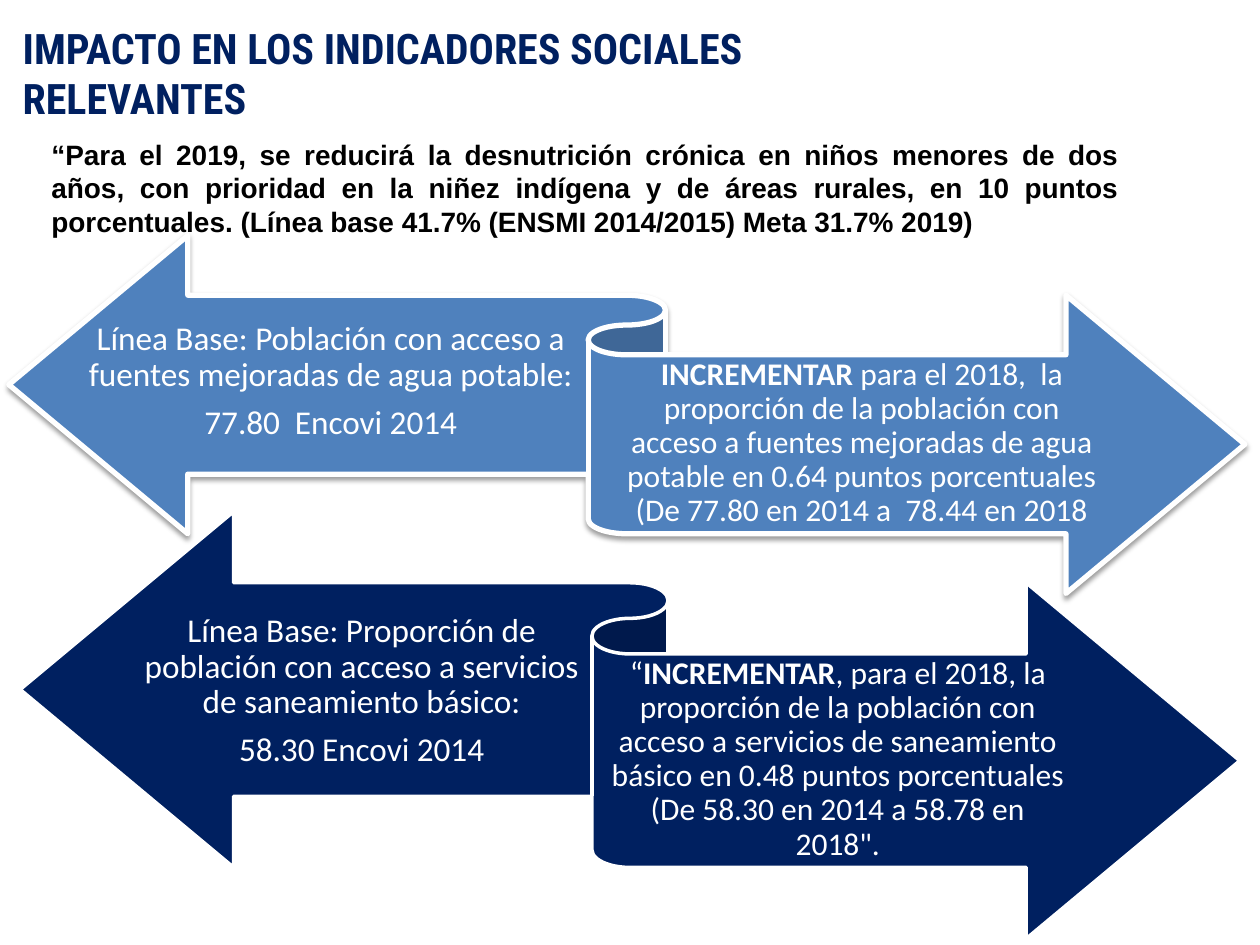
from dataclasses import dataclass

from lxml import etree
from pptx import Presentation
from pptx.dml.color import RGBColor
from pptx.enum.shapes import MSO_SHAPE
from pptx.enum.text import MSO_ANCHOR, MSO_AUTO_SIZE, PP_ALIGN
from pptx.oxml.ns import qn
from pptx.util import Inches, Pt

RIBBON = MSO_SHAPE.LEFT_RIGHT_RIBBON
TOP, MIDDLE = MSO_ANCHOR.TOP, MSO_ANCHOR.MIDDLE
LEFT, CENTER, JUSTIFY = PP_ALIGN.LEFT, PP_ALIGN.CENTER, PP_ALIGN.JUSTIFY

NAVY = RGBColor(0x00, 0x20, 0x60)
BLUE = RGBColor(0x4F, 0x81, 0xBD)
WHITE = RGBColor(0xFF, 0xFF, 0xFF)
BLACK = RGBColor(0x00, 0x00, 0x00)

Box = tuple[float, float, float, float]  # left, top, width, height in inches
Paragraph = list[tuple[str, bool]]  # (text, bold) runs


@dataclass
class Indicator:
    """A two-way ribbon: baseline on the left, target on the right."""
    ribbon: Box
    fill: RGBColor
    line_width: float
    shadow: bool
    baseline_box: Box
    baseline: list[Paragraph]
    target_box: Box
    target: list[Paragraph]


INDICATORS = [
    Indicator(
        (0.07, 1.87, 9.81, 2.84), BLUE, 3, True,
        (0.57, 2.34, 4.11, 1.39),
        [[("Línea Base: Población con acceso a fuentes mejoradas de agua potable:", False)],
         [("77.80  Encovi 2014", False)]],
        (4.92, 2.82, 3.84, 1.39),
        [[("INCREMENTAR", True),
          (" para el 2018,  la proporción de la población con acceso a fuentes "
           "mejoradas de agua potable en 0.64 puntos porcentuales "
           "(De 77.80 en 2014 a  78.44 en 2018", False)]],
    ),
    Indicator(
        (0.16, 4.06, 9.68, 3.39), NAVY, 2, False,
        (1.01, 4.66, 3.72, 1.66),
        [[("Línea Base: Proporción de población con acceso a servicios de "
           "saneamiento básico:", False)],
         [("58.30 Encovi 2014", False)]],
        (4.85, 5.2, 3.6, 1.66),
        [[("“", False), ("INCREMENTAR", True),
          (", para el 2018, la proporción de la población con acceso a servicios "
           "de saneamiento básico en 0.48 puntos porcentuales "
           "(De 58.30 en 2014 a 58.78 en 2018\".", False)]],
    ),
]


def place(shape, box: Box) -> None:
    shape.left, shape.top, shape.width, shape.height = map(Inches, box)


def write(frame, paragraphs: list[Paragraph], *, font: str, size: float,
          color: RGBColor, align=LEFT, anchor=TOP, line_spacing: float = 1.0,
          space_after: float = 0) -> None:
    frame.word_wrap = True
    frame.auto_size = MSO_AUTO_SIZE.NONE
    frame.vertical_anchor = anchor
    for index, runs in enumerate(paragraphs):
        paragraph = frame.add_paragraph() if index else frame.paragraphs[0]
        paragraph.alignment = align
        paragraph.line_spacing = line_spacing
        paragraph.space_before = Pt(0)
        paragraph.space_after = Pt(space_after)
        for text, bold in runs:
            run = paragraph.add_run()
            run.text = text
            run.font.name = font
            run.font.size = Pt(size)
            run.font.bold = bold
            run.font.color.rgb = color


def add_soft_shadow(shape) -> None:
    effects = shape._element.spPr.find(qn("a:effectLst"))
    shadow = etree.SubElement(effects, qn("a:outerShdw"), blurRad=str(Pt(3.1)),
                              dist=str(Pt(1.6)), dir="5400000", rotWithShape="0")
    color = etree.SubElement(shadow, qn("a:srgbClr"), val=str(BLACK))
    etree.SubElement(color, qn("a:alpha"), val="38000")


def add_ribbon_text(slide, box: Box, paragraphs: list[Paragraph], *,
                    size: float, bottom: float) -> None:
    frame = slide.shapes.add_textbox(*map(Inches, box)).text_frame
    frame.margin_left = frame.margin_right = 0
    frame.margin_top, frame.margin_bottom = Inches(0.07), Inches(bottom)
    write(frame, paragraphs, font="Calibri", size=size, color=WHITE, align=CENTER,
          anchor=MIDDLE, line_spacing=0.9, space_after=0.35 * size)


def add_indicator(slide, indicator: Indicator) -> None:
    ribbon = slide.shapes.add_shape(RIBBON, *map(Inches, indicator.ribbon))
    ribbon.shadow.inherit = False
    ribbon.fill.solid()
    ribbon.fill.fore_color.rgb = indicator.fill
    ribbon.line.color.rgb = WHITE
    ribbon.line.width = Pt(indicator.line_width)
    if indicator.shadow:
        add_soft_shadow(ribbon)
    add_ribbon_text(slide, indicator.baseline_box, indicator.baseline, size=19, bottom=0.08)
    add_ribbon_text(slide, indicator.target_box, indicator.target, size=18, bottom=0.07)


def main() -> None:
    presentation = Presentation()
    presentation.slide_width, presentation.slide_height = Inches(10), Inches(7.5)
    slide = presentation.slides.add_slide(presentation.slide_layouts[5])

    # Title
    title = slide.shapes.title
    place(title, (0.08, -0.08, 6.77, 1.31))
    write(title.text_frame, [[("IMPACTO EN LOS INDICADORES SOCIALES RELEVANTES", True)]],
          font="Roboto Condensed", size=24, color=NAVY, anchor=MIDDLE)

    # Baseline and target ribbons
    for indicator in INDICATORS:
        add_indicator(slide, indicator)

    # Overall goal
    goal = slide.shapes.add_textbox(*map(Inches, (0.31, 1.04, 8.67, 0.91)))
    write(goal.text_frame,
          [[("“Para el 2019, se reducirá la desnutrición crónica en niños menores de dos "
             "años, con prioridad en la niñez indígena y de áreas rurales, en 10 puntos "
             "porcentuales. (Línea base 41.7% (ENSMI 2014/2015) Meta 31.7% 2019)", True)]],
          font="Arial", size=16, color=BLACK, align=JUSTIFY)

    presentation.save("out.pptx")


if __name__ == "__main__":
    main()
